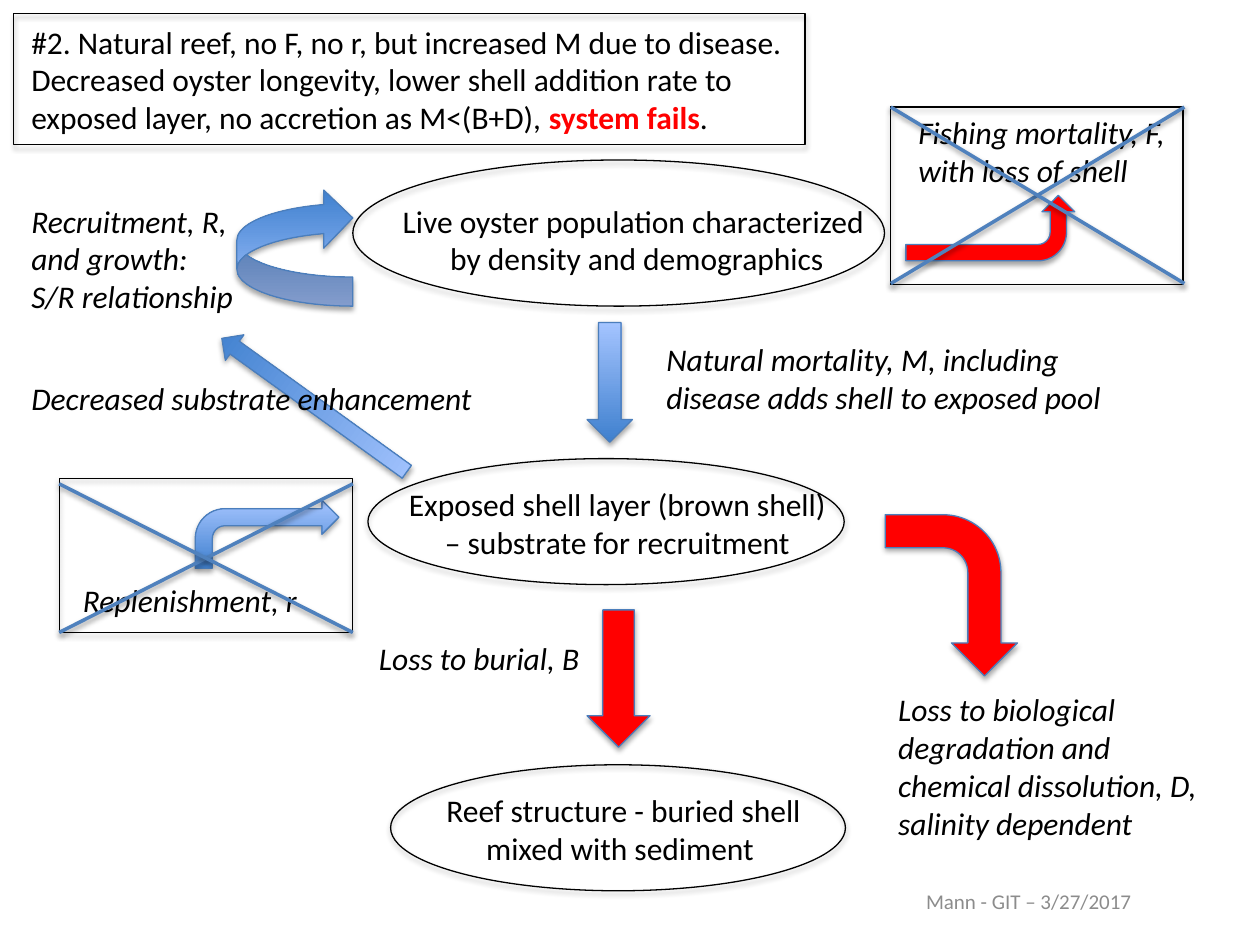
import pptx
import pptx.util
import pptx.dml.color
import pptx.enum.shapes
import pptx.enum.text
import pptx.oxml.ns
from lxml import etree

BLACK = pptx.dml.color.RGBColor(0x00, 0x00, 0x00)
RED = pptx.dml.color.RGBColor(0xFF, 0x00, 0x00)
GRAY = pptx.dml.color.RGBColor(0x8C, 0x8C, 0x8C)
OUTLINE_BLUE = pptx.dml.color.RGBColor(0x4B, 0x7E, 0xBC)
CROSS_BLUE = pptx.dml.color.RGBColor(0x4F, 0x81, 0xBD)
DEEP_BLUE = pptx.dml.color.RGBColor(0x3F, 0x80, 0xCE)
PALE_BLUE = pptx.dml.color.RGBColor(0xA4, 0xC4, 0xFF)
GRADIENT = (DEEP_BLUE, PALE_BLUE)

COLUMNS, ROWS = 100, 75
SHAPES = pptx.enum.shapes.MSO_SHAPE
CENTER = pptx.enum.text.PP_ALIGN.CENTER
LEFT = pptx.enum.text.PP_ALIGN.LEFT


class Diagram:
    """Holds the style and the current slide; lengths are grid columns and rows."""

    font = "Calibri"
    text_size = 18

    def __init__(self, presentation):
        self.column = presentation.slide_width / COLUMNS
        self.row = presentation.slide_height / ROWS
        self.slide = presentation.slides.add_slide(presentation.slide_layouts[6])

    def place(self, *lengths):
        units = (self.column, self.row) * 2
        return [pptx.util.Emu(round(length * unit)) for length, unit in zip(lengths, units)]

    def shadow(self, shape, opacity, distance):
        properties = shape._element.spPr
        name = pptx.oxml.ns.qn
        effects = properties.find(name("a:effectLst"))
        if effects is None:
            effects = etree.SubElement(properties, name("a:effectLst"))
        outer = etree.SubElement(
            effects, name("a:outerShdw"), blurRad=str(pptx.util.Pt(3.1)),
            dist=str(pptx.util.Pt(distance)), dir="5400000", rotWithShape="0")
        color = etree.SubElement(outer, name("a:srgbClr"), val=str(BLACK))
        etree.SubElement(color, name("a:alpha"), val=str(opacity * 1000))

    def text(self, box, lines, italic=False, align=LEFT, wrap=False,
             size=text_size, color=BLACK, fit=True):
        """Each line is a list of (text, color, bold) runs or a plain string."""
        frame = self.slide.shapes.add_textbox(*self.place(*box)).text_frame
        frame.word_wrap = wrap
        if fit:
            frame.auto_size = pptx.enum.text.MSO_AUTO_SIZE.SHAPE_TO_FIT_TEXT
        else:
            frame.vertical_anchor = pptx.enum.text.MSO_ANCHOR.MIDDLE
        for index, line in enumerate(lines):
            paragraph = frame.add_paragraph() if index else frame.paragraphs[0]
            paragraph.alignment = align
            runs = [(line, color, False)] if isinstance(line, str) else line
            for words, run_color, bold in runs:
                run = paragraph.add_run()
                run.text = words
                run.font.name = self.font
                run.font.size = pptx.util.Pt(size)
                run.font.bold = bold
                run.font.italic = italic
                run.font.color.rgb = run_color

    def outline(self, kind, box, color=BLACK):
        shape = self.slide.shapes.add_shape(kind, *self.place(*box))
        shape.fill.background()
        shape.line.color.rgb = color
        shape.line.width = pptx.util.Pt(0.75)
        shape.shadow.inherit = False
        self.shadow(shape, 35, 1.8)
        return shape

    def arrow(self, kind, box, fill, rotation=0, flip=None):
        shape = self.outline(kind, box, OUTLINE_BLUE)
        if fill is GRADIENT:
            shape.fill.gradient()
            shape.fill.gradient_angle = 90
            for stop, color in zip(shape.fill.gradient_stops, fill):
                stop.color.rgb = color
        else:
            shape.fill.solid()
            shape.fill.fore_color.rgb = fill
        shape.rotation = rotation
        if flip:
            shape._element.spPr.xfrm.set(flip, "1")

    def cross(self, left, top, right, bottom):
        for start, end in ((bottom, top), (top, bottom)):
            line = self.slide.shapes.add_connector(
                pptx.enum.shapes.MSO_CONNECTOR.STRAIGHT,
                *self.place(left, start, right, end))
            line.line.color.rgb = CROSS_BLUE
            line.line.width = pptx.util.Pt(2)
            self.shadow(line, 38, 1.6)


def main():
    presentation = pptx.Presentation()
    presentation.slide_width = pptx.util.Inches(10)
    presentation.slide_height = pptx.util.Inches(7.5)
    diagram = Diagram(presentation)

    # Names of the three pools
    for box, lines in (
        ((30.9, 15.5, 39.3, 7.1), ["Live oyster population characterized ",
                                   "by density and demographics"]),
        ((31, 38, 36, 7.1), ["Exposed shell layer (brown shell)",
                             " – substrate for recruitment "]),
        ((34.2, 62.3, 30.6, 7.1), ["Reef structure - buried shell ",
                                   "mixed with sediment "]),
    ):
        diagram.text(box, lines, align=CENTER)

    # Labels of the processes
    for box, lines, wrap in (
        ((1.5, 15.5, 20.6, 10.1),
         ["Recruitment, R,", "and growth:", "S/R relationship"], True),
        ((71.9, 8.5, 23.6, 7.1), ["Fishing mortality, F, with loss of shell"], True),
        ((51.9, 26.5, 40.8, 7.1),
         ["Natural mortality, M, including disease adds shell to exposed pool"], True),
        ((29.1, 50.2, 18.7, 4), ["Loss to burial, B"], False),
        ((70.3, 54.3, 26.7, 13.1),
         ["Loss to biological", "degradation and",
          "chemical dissolution, D,", "salinity dependent"], False),
        ((5.6, 45.6, 19.9, 4), ["Replenishment, r"], False),
    ):
        diagram.text(box, lines, italic=True, wrap=wrap)

    # Arrows: dissolution, replenishment, fishing, burial, mortality,
    # recruitment, substrate enhancement
    diagram.arrow(SHAPES.BENT_ARROW, (69.1, 42, 12.8, 10.5), RED, 90)
    diagram.arrow(SHAPES.BENT_ARROW, (15.5, 39.7, 11.4, 5.4), GRADIENT)
    diagram.arrow(SHAPES.BENT_ARROW, (76, 11.4, 5.2, 13.4), RED, 90, "flipH")
    diagram.arrow(SHAPES.DOWN_ARROW, (46.6, 48.4, 5, 10.9), RED)
    diagram.arrow(SHAPES.DOWN_ARROW, (46.6, 25.6, 3.6, 9.5), GRADIENT)
    diagram.arrow(SHAPES.CURVED_RIGHT_ARROW, (18.8, 15, 9.2, 9.3), GRADIENT, flip="flipV")
    diagram.arrow(SHAPES.DOWN_ARROW, (23.7, 23.1, 2.5, 18.1), GRADIENT, 125.8)

    # Pool outlines
    for box in ((29.2, 36.4, 37.8, 10), (28, 12.7, 42.2, 11.6), (31, 60.7, 36.1, 10)):
        diagram.outline(SHAPES.OVAL, box)

    # Scenario heading
    diagram.text((1.5, 1.3, 62.4, 10.1), [
        "#2. Natural reef, no F, no r, but increased M due to disease.",
        "Decreased oyster longevity, lower shell addition rate to",
        [("exposed layer, no accretion as M<(B+D), ", BLACK, False),
         ("system fails", RED, True), (".", BLACK, False)],
    ])

    # Frames of the heading and of the two excluded processes
    for box in ((1.1, 1.1, 62.8, 10.4), (70.7, 8.5, 23.2, 14.1), (4.7, 38, 23.3, 12.2)):
        diagram.outline(SHAPES.RECTANGLE, box)
    diagram.cross(70.7, 8.5, 94, 22.5)
    diagram.cross(4.7, 38.4, 28, 50.2)

    # Substrate label over its arrow, and the footer
    diagram.text((1.5, 29.6, 38.1, 4), ["Decreased substrate enhancement"], italic=True)
    diagram.text((65.8, 69.5, 31.7, 4), ["Mann - GIT – 3/27/2017"], align=CENTER,
                 wrap=True, size=12, color=GRAY, fit=False)

    presentation.save("out.pptx")


if __name__ == "__main__":
    main()
